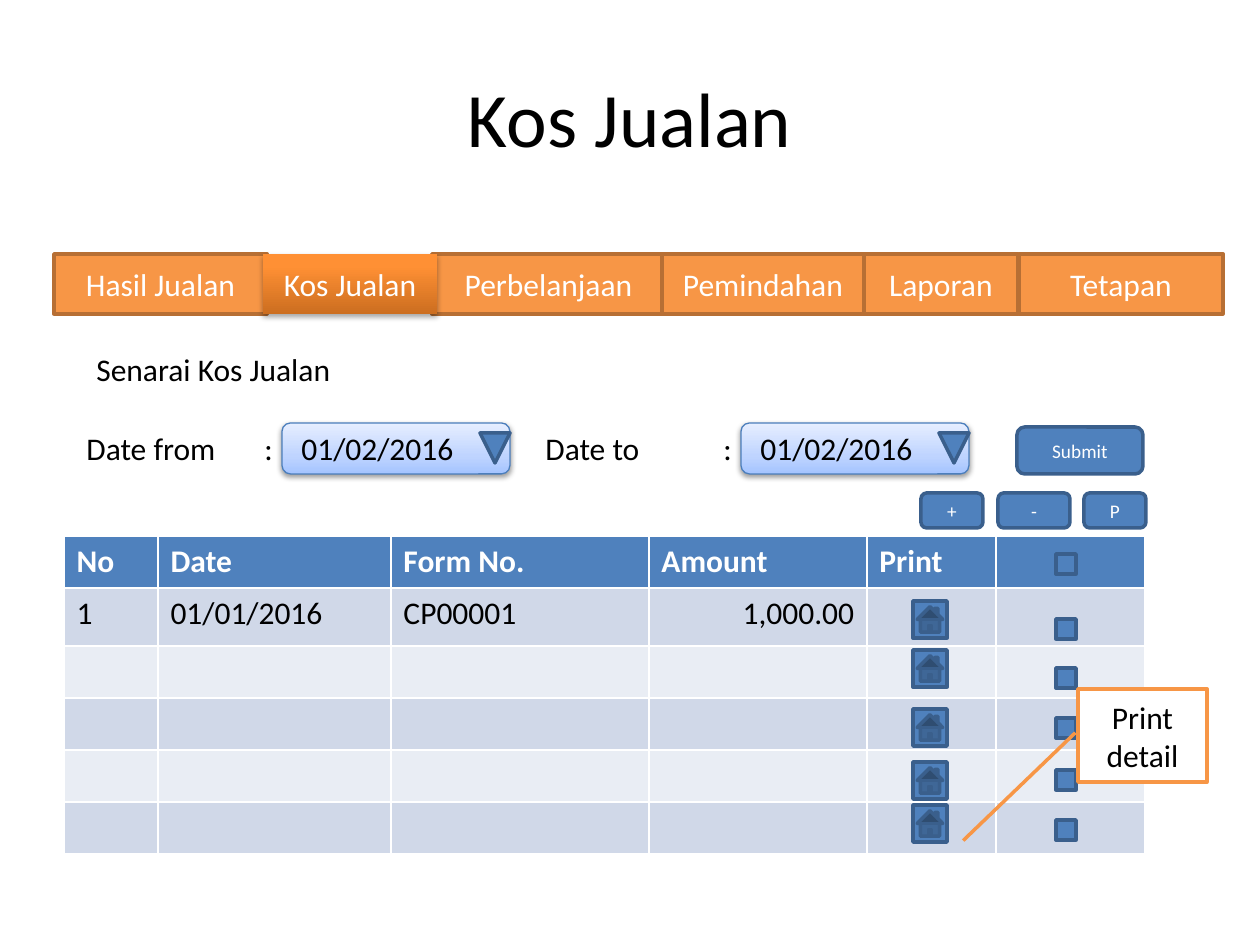
from copy import deepcopy

from lxml import etree
from pptx import Presentation
from pptx import util as u
from pptx.dml.color import RGBColor
from pptx.enum import shapes, text
from pptx.oxml.ns import qn

PX = 914400 / 126
FONT = "Calibri"
BLACK = RGBColor(0x00, 0x00, 0x00)
WHITE = RGBColor(0xFF, 0xFF, 0xFF)
BLUE = RGBColor(0x4F, 0x81, 0xBD)
DARK_BLUE = RGBColor(0x3A, 0x5F, 0x8C)
FIELD_LINE = RGBColor(0x4B, 0x7E, 0xBC)
ORANGE = RGBColor(0xF7, 0x96, 0x46)
DARK_ORANGE = RGBColor(0xB7, 0x6F, 0x34)
BANDS = (RGBColor(0xD0, 0xD8, 0xE8), RGBColor(0xE9, 0xED, 0xF4))
ACTIVE_TAB = ((0, RGBColor(0xCC, 0x6E, 0x20)), (0.8, RGBColor(0xFF, 0x90, 0x34)),
              (1, RGBColor(0xFF, 0x91, 0x36)))
FIELD = ((0, RGBColor(0xA4, 0xC4, 0xFF)), (0.35, RGBColor(0xBF, 0xD4, 0xFF)),
         (1, RGBColor(0xE6, 0xEE, 0xFF)))
SHAPE = shapes.MSO_SHAPE
ALIGN = text.PP_ALIGN


def px(value):
    return u.Emu(round(value * PX))


def box(*lengths):
    return [px(length) for length in lengths]


def write(frame, content, size=18, color=BLACK, bold=False, align=ALIGN.LEFT):
    paragraph = frame.paragraphs[0]
    paragraph.alignment = align
    run = paragraph.add_run()
    run.text = content
    run.font.name = FONT
    run.font.size = u.Pt(size)
    run.font.bold = bold
    run.font.color.rgb = color
    return paragraph


def add_tab_stops(paragraph, stops):
    tabs = etree.SubElement(paragraph._p.get_or_add_pPr(), qn("a:tabLst"))
    for stop in stops:
        etree.SubElement(tabs, qn("a:tab"), pos=str(px(stop)), algn="l")


def fill_upward(shape, stops):
    """Fill with a three-stop gradient that runs from bottom to top."""
    shape.fill.gradient()
    stop_list = shape._element.spPr.find(".//" + qn("a:gsLst"))
    stop_list.append(deepcopy(stop_list[0]))
    for stop, (position, color) in zip(shape.fill.gradient_stops, stops):
        stop.position = position
        stop.color.rgb = color
    shape.fill.gradient_angle = 90


def drop_shadow(shape, distance, opacity):
    effects = shape._element.spPr.find(qn("a:effectLst"))
    shadow = etree.SubElement(effects, qn("a:outerShdw"), blurRad="40000",
                              dist=str(u.Pt(distance)), dir="5400000", rotWithShape="0")
    color = etree.SubElement(shadow, qn("a:srgbClr"), val="000000")
    etree.SubElement(color, qn("a:alpha"), val=str(opacity * 1000))


class Screen:
    def __init__(self, slide):
        self.slide = slide

    def shape(self, kind, left, top, width, height, fill=BLUE, line=DARK_BLUE, weight=2):
        shape = self.slide.shapes.add_shape(kind, *box(left, top, width, height))
        shape.shadow.inherit = False
        if isinstance(fill, tuple) and not isinstance(fill, RGBColor):
            fill_upward(shape, fill)
        else:
            shape.fill.solid()
            shape.fill.fore_color.rgb = fill
        if line is None:
            shape.line.fill.background()
        else:
            shape.line.color.rgb = line
            shape.line.width = u.Pt(weight)
        shape.text_frame.vertical_anchor = text.MSO_ANCHOR.MIDDLE
        return shape

    def label(self, content, left, top, width, height, anchor=text.MSO_ANCHOR.TOP, **style):
        frame = self.slide.shapes.add_textbox(*box(left, top, width, height)).text_frame
        frame.word_wrap = True
        frame.vertical_anchor = anchor
        return write(frame, content, **style)

    def tab(self, content, left, width, active=False):
        fill, line = (ACTIVE_TAB, None) if active else (ORANGE, DARK_ORANGE)
        tab = self.shape(SHAPE.RECTANGLE, left, 254, width, 60, fill, line)
        if active:
            drop_shadow(tab, 1.8, 35)
        write(tab.text_frame, content, color=WHITE, align=ALIGN.CENTER)

    def button(self, content, *place):
        button = self.shape(SHAPE.ROUNDED_RECTANGLE, *place)
        write(button.text_frame, content, size=11, color=WHITE, align=ALIGN.CENTER)

    def date_field(self, name, date, left):
        top = 423
        field = self.shape(SHAPE.ROUNDED_RECTANGLE, left + 208, top, 228, 51,
                           FIELD, FIELD_LINE, 0.75)
        drop_shadow(field, 1.6, 38)
        paragraph = self.label("\t".join((name, ":", date)), left, top, 399, 51)
        add_tab_stops(paragraph, (178, 215))
        arrow = self.shape(SHAPE.ISOSCELES_TRIANGLE, left + 406, top + 10, 30, 30)
        arrow.rotation = 180

    def table(self, left, top, widths, heights, rows):
        table = self.slide.shapes.add_table(
            len(heights), len(widths), *box(left, top, sum(widths), sum(heights))).table
        for column, width in zip(table.columns, widths):
            column.width = px(width)
        for index, height in enumerate(heights):
            table.rows[index].height = px(height)
            header = index == 0
            values = rows[index] if index < len(rows) else ()
            for number, cell in enumerate(table.rows[index].cells):
                cell.fill.solid()
                cell.fill.fore_color.rgb = BLUE if header else BANDS[(index - 1) % 2]
                if number < len(values):
                    amount = number == 3 and not header
                    write(cell.text_frame, values[number], bold=header,
                          color=WHITE if header else BLACK,
                          align=ALIGN.RIGHT if amount else ALIGN.LEFT)

    def callout(self, content, place, adjustments):
        callout = self.shape(SHAPE.LINE_CALLOUT_1, *place, fill=WHITE, line=ORANGE)
        for index, value in enumerate(adjustments):
            callout.adjustments[index] = value
        write(callout.text_frame, content, align=ALIGN.CENTER)


def main():
    presentation = Presentation()
    presentation.slide_width, presentation.slide_height = box(1260, 945)
    screen = Screen(presentation.slides.add_slide(presentation.slide_layouts[6]))

    screen.label("Kos Jualan", 63, 38, 1134, 157, anchor=text.MSO_ANCHOR.MIDDLE,
                 size=44, align=ALIGN.CENTER)
    screen.label("Senarai Kos Jualan", 84, 344, 262, 51)

    for name, left, width in (("Hasil Jualan", 54, 213), ("Perbelanjaan", 432, 233),
                              ("Laporan", 864, 154), ("Tetapan", 1019, 204),
                              ("Pemindahan", 662, 202)):
        screen.tab(name, left, width)
    screen.tab("Kos Jualan", 263, 174, active=True)

    for name, left, width in (("-", 998, 72), ("P", 1084, 62), ("+", 921, 62)):
        screen.button(name, left, 493, width, 35)

    screen.table(64, 536, (94, 233, 258, 218, 129, 149), (52, 58, 52, 52, 52, 52),
                 (("No", "Date", "Form No.", "Amount", "Print"),
                  ("1", "01/01/2016", "CP00001", "1,000.00")))
    for top in (554, 619, 668, 718, 770, 820):
        screen.shape(SHAPE.RECTANGLE, 1056, top, 20, 20)

    screen.date_field("Date from", "01/02/2016", 74)
    screen.date_field("Date to", "01/02/2016", 533)

    for top in (601, 650, 709, 762, 805):
        screen.shape(SHAPE.ACTION_BUTTON_HOME, 913, top, 34, 37)

    screen.callout("Print detail", (1078, 689, 129, 93), (0.47, -0.02, 1.63, -0.89))
    screen.button("Submit", 1017, 427, 126, 47)
    presentation.save("out.pptx")


if __name__ == "__main__":
    main()
